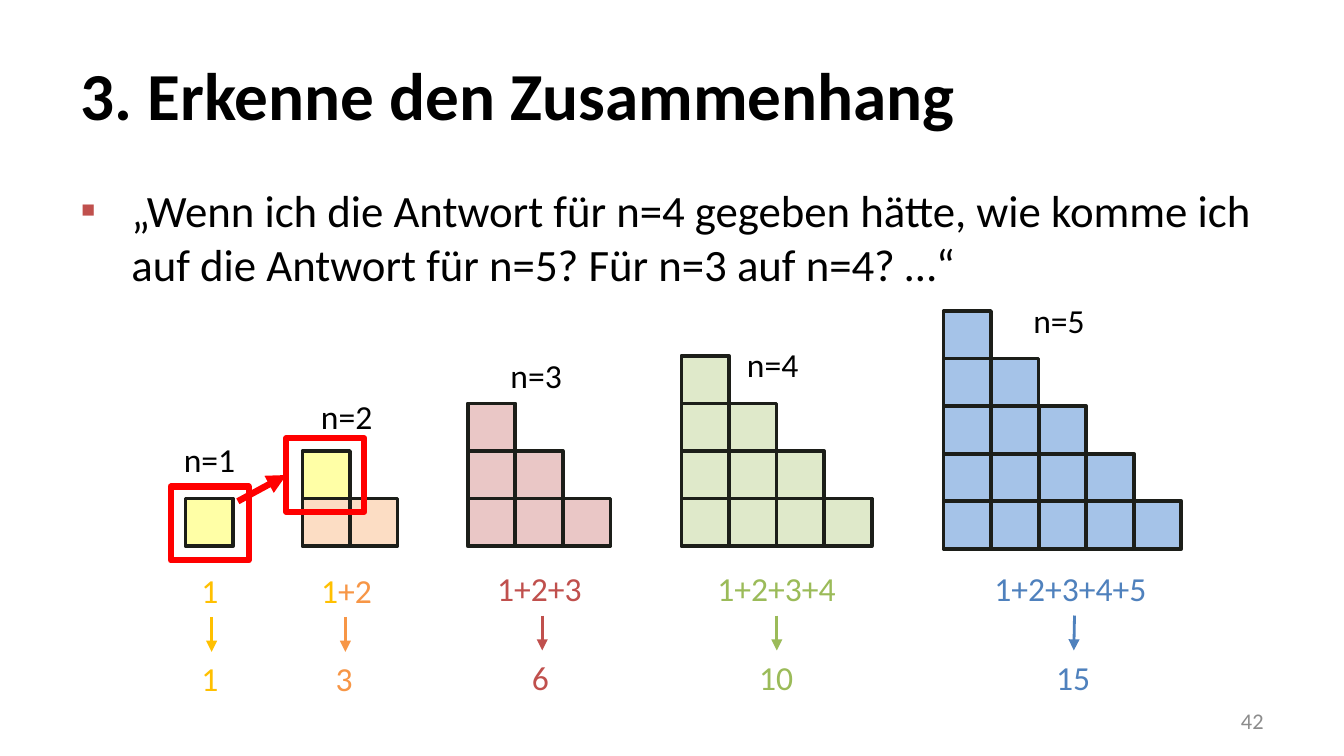
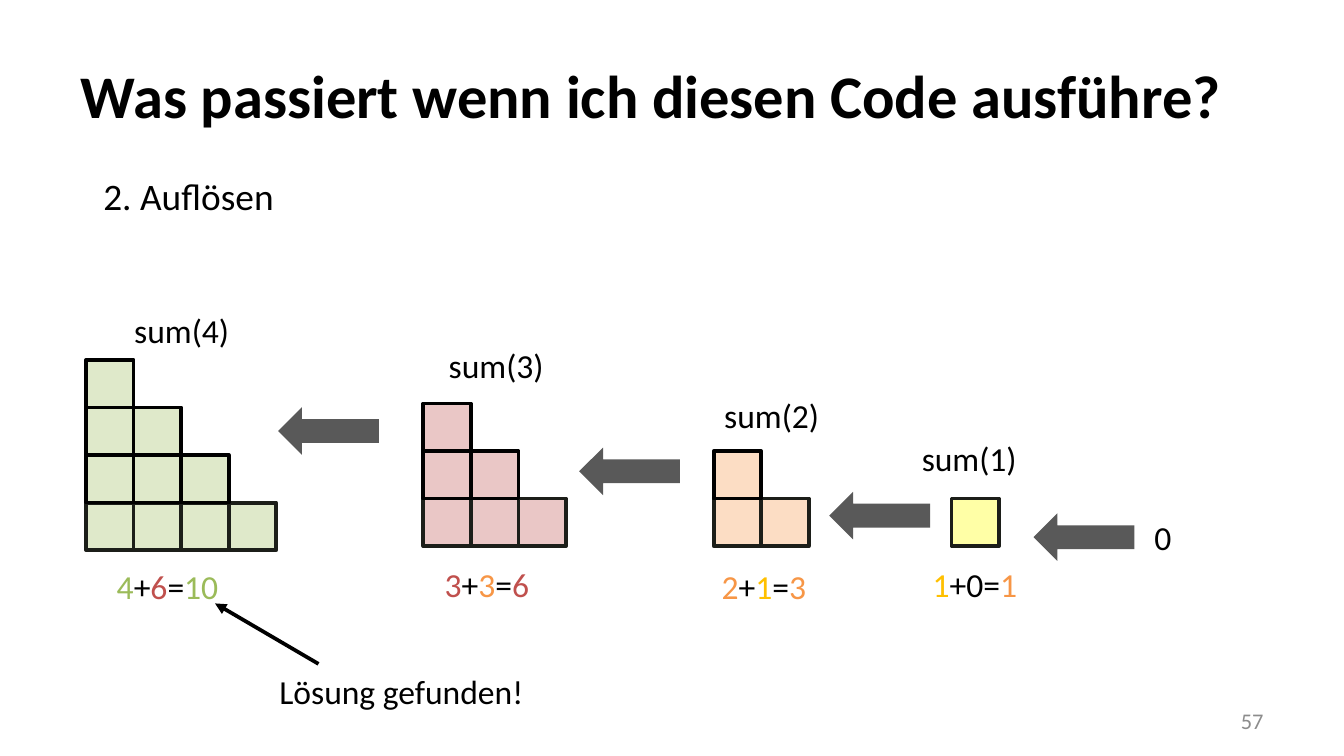
import pptx
import pptx.util
import pptx.dml.color
import pptx.enum.shapes
import pptx.enum.text
import pptx.oxml.ns
import lxml.etree

# Square grid: 100 columns across the slide, 56.25 rows down
SLIDE_WIDTH = pptx.util.Inches(10)
UNIT = SLIDE_WIDTH / 100
ROWS = 56.25
BLOCK = 3.54
TEXT_HEIGHT = 4

FONT = "Calibri"
COLOURS = {
    "black": "000000", "outline": "1C1E19", "number": "8C8C8C",
    "red": "FF0000", "grey": "595959",
    # text colour of each staircase size
    1: "FFC000", 2: "F79646", 3: "C0504D", 4: "9BBB59", 5: "4F81BD",
}
# Block colour and opacity of each staircase size
BLOCK_FILLS = {
    1: ("FFFF00", 35), 2: ("FAC090", 53), 3: ("D99694", 53),
    4: ("C3D69B", 53), 5: ("558ED5", 53),
}
SHAPE = pptx.enum.shapes.MSO_SHAPE
ALIGN = pptx.enum.text.PP_ALIGN
ANCHOR = pptx.enum.text.MSO_ANCHOR
AUTO_SIZE = pptx.enum.text.MSO_AUTO_SIZE


def grid(*cells):
    return [pptx.util.Emu(round(cell * UNIT)) for cell in cells]


def rgb(hex_string):
    return pptx.dml.color.RGBColor.from_string(hex_string)


def add_element(parent, tag, **attributes):
    return lxml.etree.SubElement(parent, pptx.oxml.ns.qn(tag), attributes)


# Text
def write_text(frame, spans, size=18, bold=False, align=ALIGN.LEFT, anchor=ANCHOR.TOP):
    """Fill a frame with one paragraph of (text, colour name) spans."""
    frame.word_wrap = True
    frame.vertical_anchor = anchor
    para = frame.paragraphs[0]
    para.alignment = align
    if isinstance(spans, str):
        spans = [(spans, "black")]
    for text, colour in spans:
        span = para.add_run()
        span.text = text
        span.font.name = FONT
        span.font.size = pptx.util.Pt(size)
        span.font.bold = bold
        span.font.color.rgb = rgb(COLOURS[colour])
    return para


def add_label(shapes, left, top, width, spans, height=TEXT_HEIGHT, **text_format):
    box = shapes.add_textbox(*grid(left, top, width, height))
    write_text(box.text_frame, spans, **text_format)
    box.text_frame.auto_size = AUTO_SIZE.SHAPE_TO_FIT_TEXT
    return box


def add_bullet_text(page, left, top, width, height, text):
    box = page.shapes.add_textbox(*grid(left, top, width, height))
    para = write_text(box.text_frame, text, size=24)
    para.space_before = para.space_after = pptx.util.Pt(6)
    properties = para._p.get_or_add_pPr()
    indent = pptx.util.Inches(0.38)
    properties.set("marL", str(indent))
    properties.set("indent", str(-indent))
    colour = add_element(properties, "a:buClr")
    add_element(colour, "a:srgbClr", val=COLOURS[3])
    add_element(properties, "a:buFont", typeface="Arial")
    add_element(properties, "a:buChar", char="▪")


# Shapes
def add_rectangle(shapes, left, top, width, height, line, line_width, fill=None):
    box = shapes.add_shape(SHAPE.RECTANGLE, *grid(left, top, width, height))
    box.shadow.inherit = False
    box.line.color.rgb = rgb(COLOURS[line])
    box.line.width = pptx.util.Pt(line_width)
    if fill is None:
        box.fill.background()
    else:
        colour, opacity = fill
        box.fill.solid()
        box.fill.fore_color.rgb = rgb(colour)
        tint = box.fill._xPr.find(".//" + pptx.oxml.ns.qn("a:srgbClr"))
        add_element(tint, "a:alpha", val=str(opacity * 1000))
    return box


def add_staircase(page, size, left, base, upper_line="outline", top_fill=None):
    """Stack `size` rows of blocks; `base` is the top of the lowest row."""
    group = page.shapes.add_group_shape()
    for level in range(size):
        fill = BLOCK_FILLS[size]
        if top_fill and level == size - 1:
            fill = BLOCK_FILLS[top_fill]
        for column in range(size - level):
            add_rectangle(group.shapes, left + column * BLOCK, base - level * BLOCK,
                          BLOCK, BLOCK, upper_line if level else "outline", 2, fill)
    return group


def add_block_arrow(page, left, top):
    arrow = page.shapes.add_shape(SHAPE.RIGHT_ARROW, *grid(left, top, 7.5, BLOCK))
    arrow.shadow.inherit = False
    arrow.fill.solid()
    arrow.fill.fore_color.rgb = rgb(COLOURS["grey"])
    arrow.line.fill.background()
    arrow._element.spPr.find(pptx.oxml.ns.qn("a:xfrm")).set("flipH", "1")


def add_arrow(shapes, start, end, colour, width):
    arrow = shapes.add_connector(pptx.enum.shapes.MSO_CONNECTOR.STRAIGHT,
                                 *grid(*start, *end))
    arrow.line.color.rgb = rgb(COLOURS[colour])
    arrow.line.width = pptx.util.Pt(width)
    add_element(arrow.line._get_or_add_ln(), "a:tailEnd", type="triangle")
    add_element(arrow._element.spPr, "a:effectLst")
    return arrow


def is_centred(box, column):
    return abs(box.left + box.width / 2 - column * UNIT) < 0.1 * UNIT


# Shared slide frame
def add_page(deck, title, number, title_size=36, number_width=4.8):
    page = deck.slides.add_slide(deck.slide_layouts[5])
    heading = page.shapes.title
    heading.left, heading.top, heading.width, heading.height = grid(5, 2.3, 90, 9.4)
    write_text(heading.text_frame, title, size=title_size, bold=True,
               anchor=ANCHOR.MIDDLE)
    heading.text_frame.auto_size = AUTO_SIZE.NONE
    box = page.shapes.add_textbox(*grid(95 - number_width, 52.1, number_width, 3))
    write_text(box.text_frame, [(number, "number")], size=12, align=ALIGN.RIGHT,
               anchor=ANCHOR.MIDDLE)
    return page


def build_pattern_page(deck):
    page = add_page(deck, "3. Erkenne den Zusammenhang", "42")
    shapes = page.shapes

    # Staircases: size, left, base, label left, label top
    for size, left, base, label_left, label_top in (
            (5, 70.2, 37.3, 75.9, 21.8), (4, 50.7, 37.1, 54.6, 25.1),
            (3, 34.8, 37.1, 37, 25.9), (2, 22.5, 37.1, 22.9, 29),
            (1, 13.8, 37.1, 12.7, 32.2)):
        add_staircase(page, size, left, base, top_fill=1 if size == 2 else None)
        add_label(shapes, label_left, label_top, 6.3, f"n={size}")

    # Sums and results: size, sum left and width, top, result left and width, arrow column
    for size, left, width, top, result_left, result_width, column in (
            (1, 14, 3.5, 41.9, 14, 3.5, 15.75), (2, 22.9, 5.9, 41.9, 24, 3.4, 25.7),
            (3, 36, 8.5, 41.8, 38.6, 3.5, 40.35), (4, 52.4, 11.7, 41.8, 55.5, 5.8, 57.8),
            (5, 73, 13.9, 41.8, 77.6, 5.3, 79.9)):
        terms = "+".join(str(term) for term in range(1, size + 1))
        spans = [("1", 1), ("+2", 2)] if size == 2 else [(terms, size)]
        total = str(size * (size + 1) // 2)
        source = add_label(shapes, left, top, width, spans)
        result = add_label(shapes, result_left, top + 6.6, result_width, [(total, size)])
        arrow = add_arrow(shapes, (column, top + TEXT_HEIGHT), (column, top + 6.6),
                          size, 1.5)
        if is_centred(source, column):
            arrow.begin_connect(source, 2)
        if is_centred(result, column):
            arrow.end_connect(result, 0)

    # Highlight n=1 inside n=2
    add_rectangle(shapes, 12.7, 36.2, 5.8, 5.5, "red", 3.25)
    inner = add_rectangle(shapes, 21.3, 32.6, 5.8, 5.5, "red", 3.25)
    arrow = add_arrow(shapes, (17.7, 37.3), (21.3, 35.35), "red", 3.5)
    arrow.end_connect(inner, 1)

    add_bullet_text(page, 5, 13.1, 90, 9.5,
                    "„Wenn ich die Antwort für n=4 gegeben hätte, wie komme ich "
                    "auf die Antwort für n=5? Für n=3 auf n=4? …“")


def build_resolve_page(deck):
    page = add_page(deck, "Was passiert wenn ich diesen Code ausführe?", "57",
                    title_size=32.4, number_width=23.3)
    shapes = page.shapes
    add_label(shapes, 6.7, 12.4, 63.8, "2. Auflösen", height=4.4, size=20)

    # Staircases with their calls: size, left, base, label left, label top
    for size, left, base, label_left, label_top in (
            (4, 6.4, 37.4, 9, 22.6), (3, 31.5, 37.1, 32.4, 25.2),
            (2, 53.1, 37.1, 52.9, 28.9), (1, 70.8, 37.1, 67.6, 32.1)):
        group = add_staircase(page, size, left, base, upper_line="black")
        add_label(group.shapes, label_left, label_top, 9.8, f"sum({size})")

    # Equations
    plus, equals = ("+", "black"), ("=", "black")
    for left, top, spans in (
            (7.7, 41.6, [("4", 4), plus, ("6", 3), equals, ("10", 4)]),
            (32.1, 41.5, [("3", 3), plus, ("3", 2), equals, ("6", 3)]),
            (52.7, 41.6, [("2", 2), plus, ("1", 1), equals, ("3", 2)]),
            (68.4, 41.5, [("1", 1), ("+0=", "black"), ("1", 2)])):
        add_label(shapes, left, top, 12.5, spans)

    # Return values flowing left
    for left, top in ((20.7, 30.3), (43.1, 33.3), (61.7, 36.6), (76.9, 38.2)):
        add_block_arrow(page, left, top)
    add_label(shapes, 84.9, 38, 4.9, "0")

    # Solution callout
    callout = shapes.add_group_shape().shapes
    add_label(callout, 19.8, 49.4, 22.8, "Lösung gefunden!")
    add_arrow(callout, (23.7, 49.4), (16, 44.9), "black", 2)


def main():
    deck = pptx.Presentation()
    deck.slide_width, deck.slide_height = grid(100, ROWS)
    build_pattern_page(deck)
    build_resolve_page(deck)
    deck.save("out.pptx")


if __name__ == "__main__":
    main()
